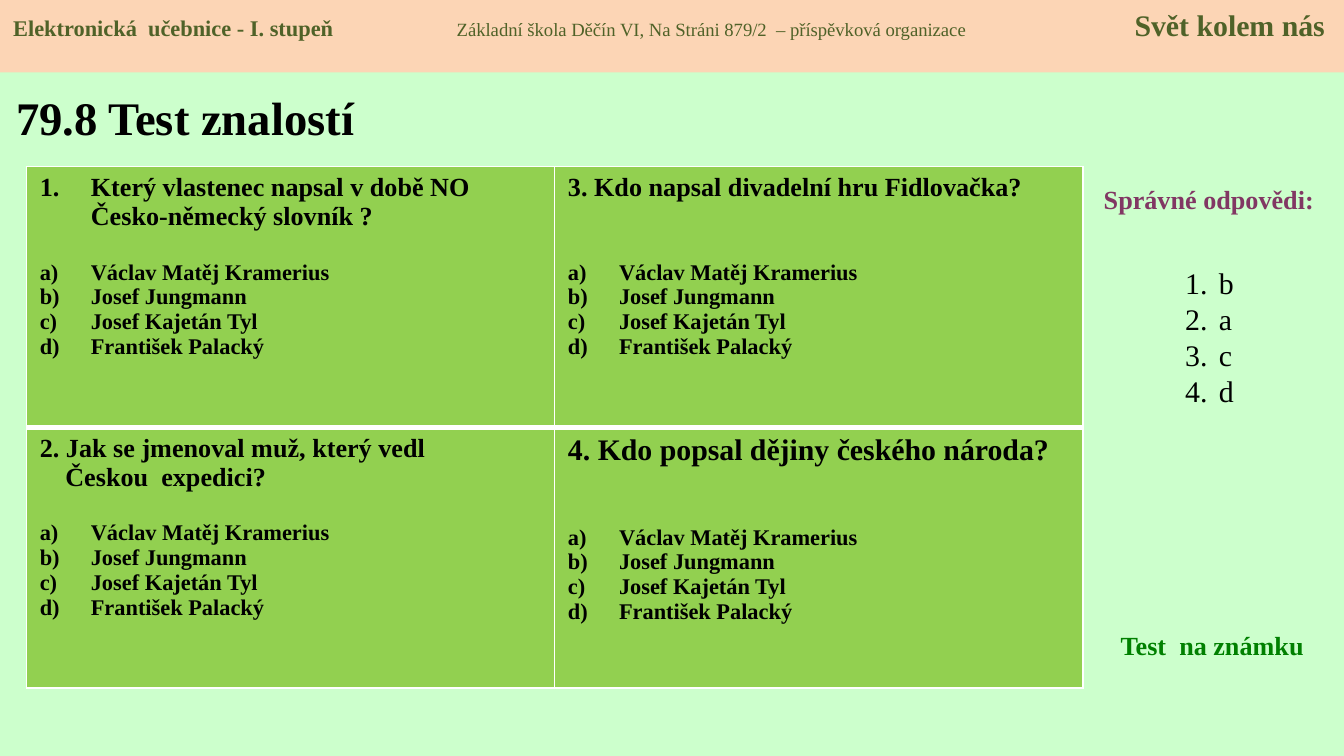
from dataclasses import dataclass
from typing import Optional

import pptx
import pptx.dml.color
import pptx.enum.shapes
import pptx.enum.text
import pptx.oxml.ns
import pptx.util
from lxml import etree

RGBColor = pptx.dml.color.RGBColor
Align = pptx.enum.text.PP_ALIGN
Anchor = pptx.enum.text.MSO_ANCHOR

MINT = RGBColor(0xCC, 0xFF, 0xCC)
PEACH = RGBColor(0xFC, 0xD5, 0xB5)
OLIVE = RGBColor(0x4F, 0x62, 0x28)
LIME = RGBColor(0x92, 0xD0, 0x50)
PLUM = RGBColor(0x81, 0x37, 0x63)
GREEN = RGBColor(0x00, 0x80, 0x00)
BLACK = RGBColor(0, 0, 0)
WHITE = RGBColor(0xFF, 0xFF, 0xFF)

FONT = "Times New Roman"
SLIDE_WIDTH = pptx.util.Inches(10)
SLIDE_HEIGHT = SLIDE_WIDTH * 9 // 16
HANGING = 0.38
ANSWERS = ("Václav Matěj Kramerius", "Josef Jungmann", "Josef Kajetán Tyl", "František Palacký")


@dataclass
class Area:
    """Left, top, width and height in per cent of the slide."""
    left: float
    top: float
    width: float
    height: float

    def lengths(self) -> tuple:
        return (int(SLIDE_WIDTH * self.left / 100), int(SLIDE_HEIGHT * self.top / 100),
                int(SLIDE_WIDTH * self.width / 100), int(SLIDE_HEIGHT * self.height / 100))


@dataclass
class Line:
    text: str
    size: float
    bold: bool = True
    color: RGBColor = BLACK
    margin: float = 0
    first: float = 0
    numbering: Optional[str] = None
    before: float = 0
    align: Align = Align.LEFT


@dataclass
class Question:
    row: int
    column: int
    heading: list
    gap: float


@dataclass
class Label:
    area: Area
    line: Line


QUESTIONS = [
    Question(0, 0, [Line("Který vlastenec napsal v době NO Česko-německý slovník ?", 14,
                         margin=HANGING, first=-HANGING, numbering="arabicPeriod")], 15.5),
    Question(0, 1, [Line("3. Kdo napsal divadelní hru Fidlovačka?", 14,
                         margin=HANGING, first=-HANGING)], 31),
    Question(1, 0, [Line("2. Jak se jmenoval muž, který vedl", 14),
                    Line("Českou  expedici?", 14, margin=0.19)], 15.5),
    Question(1, 1, [Line("4. Kdo popsal dějiny českého národa?", 16,
                         margin=HANGING, first=-HANGING)], 31),
]
LABELS = [
    Label(Area(80.5, 23.4, 18.9, 6.04),
          Line("Správné odpovědi:", 14, color=PLUM, align=Align.CENTER)),
    Label(Area(82.4, 82.35, 15.7, 6.04), Line("Test  na známku", 14, color=GREEN)),
]
HEADER = [
    Line("Elektronická  učebnice - I. stupeň", 12, color=OLIVE),
    Line("\tZákladní škola Děčín VI, Na Stráni 879/2  – příspěvková organizace", 10, False, OLIVE),
    Line("\tSvět kolem nás", 16, color=OLIVE),
]
HEADER_TABS = ((3.3, "l"), (9.76, "r"))


def add_element(parent, tag: str, **attributes: str):
    element = etree.SubElement(parent, pptx.oxml.ns.qn(tag))
    for name, value in attributes.items():
        element.set(name, value)
    return element


def format_span(span, line: Line) -> None:
    span.font.name = FONT
    span.font.size = pptx.util.Pt(line.size)
    span.font.bold = line.bold
    span.font.color.rgb = line.color


def write_lines(frame, lines: list) -> None:
    frame.text = "\n".join(line.text for line in lines)
    for para, line in zip(frame.paragraphs, lines):
        properties = para._p.get_or_add_pPr()
        properties.set("marL", str(pptx.util.Inches(line.margin)))
        properties.set("indent", str(pptx.util.Inches(line.first)))
        if line.numbering:
            add_element(properties, "a:buFont", typeface="+mj-lt")
            add_element(properties, "a:buAutoNum", type=line.numbering)
        para.alignment = line.align
        if line.before:
            para.space_before = pptx.util.Pt(line.before)
        for span in para.runs:
            format_span(span, line)


def add_title(page) -> None:
    title = page.shapes.title
    title.left, title.top, title.width, title.height = Area(0.2, 9.7, 31.9, 11.56).lengths()
    title.text_frame.vertical_anchor = Anchor.MIDDLE
    write_lines(title.text_frame, [Line("79.8 Test znalostí", 25)])


def add_label(page, label: Label) -> None:
    box = page.shapes.add_textbox(*label.area.lengths())
    box.text_frame.word_wrap = False
    write_lines(box.text_frame, [label.line])


def draw_borders(cell, bottom: float) -> None:
    properties = cell._tc.get_or_add_tcPr()
    for side, width in (("L", 1), ("R", 1), ("T", 1), ("B", bottom)):
        border = add_element(properties, f"a:ln{side}", w=str(pptx.util.Pt(width)))
        fill = add_element(border, "a:solidFill")
        add_element(fill, "a:srgbClr", val=str(WHITE))


def add_questions(page) -> None:
    table = page.shapes.add_table(2, 2, *Area(1.96, 22.04, 78.6, 68.98).lengths()).table
    table.first_row = False
    table.horz_banding = False
    for question in QUESTIONS:
        cell = table.cell(question.row, question.column)
        draw_borders(cell, bottom=3 if question.row == 0 else 1)
        cell.fill.solid()
        cell.fill.fore_color.rgb = LIME
        options = [Line(answer, 12, margin=HANGING, first=-HANGING, numbering="alphaLcParenR",
                        before=0 if index else question.gap)
                   for index, answer in enumerate(ANSWERS)]
        write_lines(cell.text_frame, question.heading + options)


def add_solutions(page) -> None:
    box = page.shapes.add_textbox(*Area(87.2, 29.33, 5.5, 35.38).lengths())
    frame = box.text_frame
    frame.word_wrap = True
    frame.margin_top = pptx.util.Inches(0.32)
    frame.margin_right = 0
    write_lines(frame, [Line(letter, 16, False, margin=0.25, first=-0.25,
                             numbering="arabicPeriod") for letter in "bacd"])


def add_header(page) -> None:
    band = page.shapes.add_shape(pptx.enum.shapes.MSO_SHAPE.RECTANGLE,
                                 *Area(0, 0, 100, 9.6).lengths())
    band.shadow.inherit = False
    band.fill.solid()
    band.fill.fore_color.rgb = PEACH
    band.line.fill.background()
    band.text_frame.word_wrap = True
    band.text_frame.vertical_anchor = Anchor.TOP
    para = band.text_frame.paragraphs[0]
    para.alignment = Align.LEFT
    tabs = add_element(para._p.get_or_add_pPr(), "a:tabLst")
    for position, alignment in HEADER_TABS:
        add_element(tabs, "a:tab", pos=str(pptx.util.Inches(position)), algn=alignment)
    for line in HEADER:
        span = para.add_run()
        span.text = line.text
        format_span(span, line)


def main() -> None:
    deck = pptx.Presentation()
    deck.slide_width, deck.slide_height = SLIDE_WIDTH, SLIDE_HEIGHT
    page = deck.slides.add_slide(deck.slide_layouts[0])
    page.background.fill.solid()
    page.background.fill.fore_color.rgb = MINT
    subtitle = page.placeholders[1].element
    subtitle.getparent().remove(subtitle)
    add_title(page)
    add_questions(page)
    add_solutions(page)
    for label in LABELS:
        add_label(page, label)
    add_header(page)
    deck.save("out.pptx")


if __name__ == "__main__":
    main()
